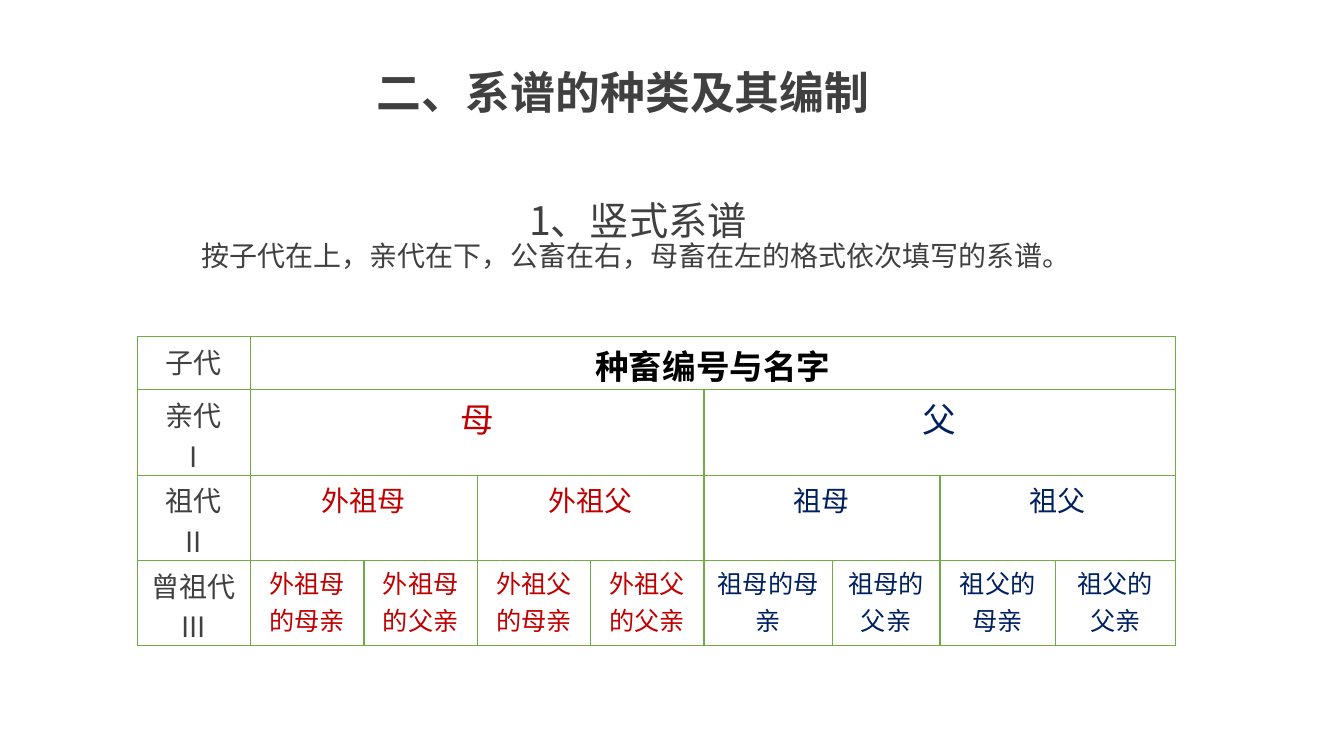
from dataclasses import dataclass

import pptx
import pptx.dml.color
import pptx.enum.text
import pptx.oxml
import pptx.oxml.ns
import pptx.util

Pt = pptx.util.Pt
Align = pptx.enum.text.PP_ALIGN
Anchor = pptx.enum.text.MSO_ANCHOR

FONT = "Noto Sans CJK SC"
GREY, BLACK, MATERNAL, PATERNAL = "404040", "000000", "C00000", "002060"
BORDER = "6FAC46"
COLUMN_WIDTHS = [81, 81, 81, 81, 81, 91.5, 77, 82.5, 85.5]
ANCESTOR_COLUMNS = len(COLUMN_WIDTHS) - 1


@dataclass
class Generation:
    label: str
    label_margin: float
    names: list[str]
    size: float
    height: float
    bold: bool = False


GENERATIONS = [
    Generation("子代", 8.5, ["种畜编号与名字"], 24, 38, True),
    Generation("亲代I", 19.5, ["母", "父"], 24, 61),
    Generation("祖代II", 19.5, ["外祖母", "外祖父", "祖母", "祖父"], 20, 61),
    Generation("曾祖代\nIII", 8.5,
               ["外祖母的母亲", "外祖母的父亲", "外祖父的母亲", "外祖父的父亲",
                "祖母的母亲", "祖母的父亲", "祖父的母亲", "祖父的父亲"], 18, 61),
]


def format_paragraph(paragraph, size: float, color: str, bold: bool = False,
                     align=Align.CENTER) -> None:
    paragraph.alignment = align
    for run in paragraph.runs:
        run.font.size = Pt(size)
        run.font.bold = bold
        run.font.color.rgb = pptx.dml.color.RGBColor.from_string(color)
        run.font.name = FONT
        east_asian = pptx.oxml.parse_xml(
            f'<a:ea {pptx.oxml.ns.nsdecls("a")} typeface="{FONT}"/>')
        run.font._element.append(east_asian)


def set_insets(box, side: float, top: float) -> None:
    box.margin_left = box.margin_right = Pt(side)
    box.margin_top, box.margin_bottom = Pt(top), 0


def draw_borders(cell) -> None:
    properties = cell._tc.get_or_add_tcPr()
    for side in ("lnL", "lnR", "lnT", "lnB"):
        properties.append(pptx.oxml.parse_xml(
            f'<a:{side} {pptx.oxml.ns.nsdecls("a")} w="{Pt(1)}"><a:solidFill>'
            f'<a:srgbClr val="{BORDER}"/></a:solidFill></a:{side}>'))
    cell.fill.background()


def fill_cell(cell, text: str, size: float, color: str, bold: bool = False,
              margin: float = 8.5) -> None:
    set_insets(cell, margin, 3)
    cell.vertical_anchor = Anchor.TOP
    cell.text_frame.text = text
    for paragraph in cell.text_frame.paragraphs:
        format_paragraph(paragraph, size, color, bold)


def branch_color(index: int, count: int) -> str:
    if count == 1:
        return BLACK
    return MATERNAL if index < count // 2 else PATERNAL


def add_heading(slide) -> None:
    heading = slide.shapes.title
    heading.left, heading.top, heading.width, heading.height = (
        Pt(31), Pt(45.4), Pt(828), Pt(39.6))
    set_insets(heading.text_frame, 0, 0.7)
    heading.text_frame.vertical_anchor = Anchor.MIDDLE
    heading.text_frame.text = "二、系谱的种类及其编制"
    format_paragraph(heading.text_frame.paragraphs[0], 32, GREY, True)


def add_introduction(slide) -> None:
    introduction = slide.shapes.add_textbox(Pt(144), Pt(145), Pt(628.5), Pt(86)).text_frame
    introduction.word_wrap = True
    set_insets(introduction, 0, 0.7)
    introduction.text = ("1、竖式系谱\n"
                         "按子代在上，亲代在下，公畜在右，母畜在左的格式依次填写的系谱。")
    subtitle, definition = introduction.paragraphs
    subtitle._p.get_or_add_pPr().set("marL", str(Pt(234)))
    for paragraph, size in ((subtitle, 28), (definition, 20)):
        paragraph.line_spacing = 0.85
        format_paragraph(paragraph, size, GREY, align=Align.LEFT)


def add_pedigree(slide) -> None:
    pedigree = slide.shapes.add_table(
        len(GENERATIONS), len(COLUMN_WIDTHS), Pt(98), Pt(240.4),
        Pt(sum(COLUMN_WIDTHS)), Pt(sum(g.height for g in GENERATIONS))).table
    pedigree.first_row = pedigree.horz_banding = False
    for column, width in zip(pedigree.columns, COLUMN_WIDTHS):
        column.width = Pt(width)
    for cell in pedigree.iter_cells():
        draw_borders(cell)
    for row, generation in enumerate(GENERATIONS):
        pedigree.rows[row].height = Pt(generation.height)
        fill_cell(pedigree.cell(row, 0), generation.label, 20, GREY,
                  margin=generation.label_margin)
        # Each generation shares the ancestor columns equally
        count = len(generation.names)
        span = ANCESTOR_COLUMNS // count
        for index, name in enumerate(generation.names):
            first = 1 + index * span
            ancestor = pedigree.cell(row, first)
            if span > 1:
                ancestor.merge(pedigree.cell(row, first + span - 1))
            fill_cell(ancestor, name, generation.size,
                      branch_color(index, count), generation.bold)


def main() -> None:
    presentation = pptx.Presentation()
    presentation.slide_width, presentation.slide_height = Pt(960), Pt(540)
    slide = presentation.slides.add_slide(presentation.slide_layouts[5])
    # Heading and definition
    add_heading(slide)
    add_introduction(slide)
    # Pedigree table
    add_pedigree(slide)
    presentation.save("out.pptx")


if __name__ == "__main__":
    main()
